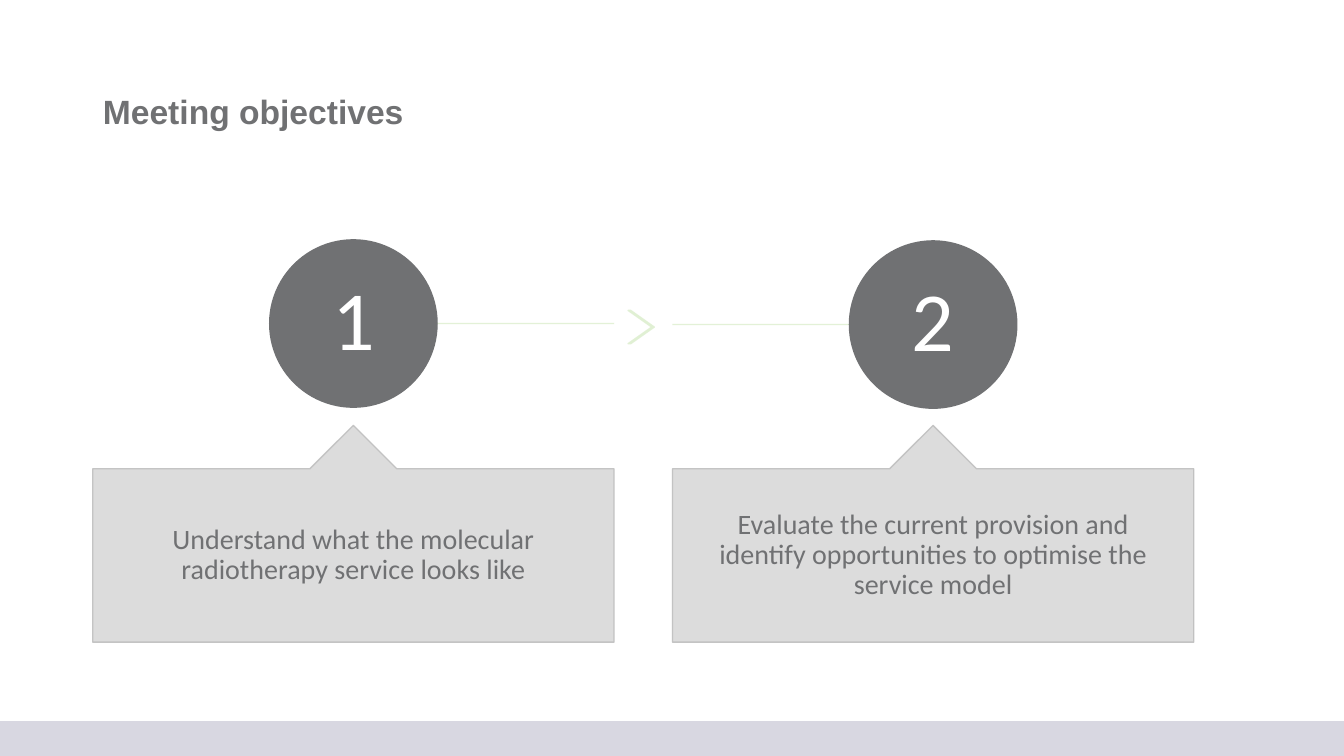
from pptx import Presentation
from pptx import util as u
from pptx.dml.color import RGBColor
from pptx.enum import shapes, text
from pptx.oxml import ns
from lxml import etree

GREY, GREEN, WHITE = "707173", "E0F0D3", "FFFFFF"
BAND, CALLOUT, EDGE = "D8D7E1", "D9D9D9", "BFBFBF"
KIND = shapes.MSO_SHAPE


def colour(value):
    return RGBColor.from_string(value)


class ObjectivesPage:
    """Holds the slide and the style shared by its elements."""

    def __init__(self, deck):
        self.page = deck.slides.add_slide(deck.slide_layouts[5])

    def soften(self, item):
        for tint in item.element.spPr.iter(ns.qn("a:srgbClr")):
            etree.SubElement(tint, ns.qn("a:alpha"), val="90000")

    def set_words(self, item, words, size, font, tint, align, bold=False):
        frame = item.text_frame
        frame.text = words
        frame.word_wrap = True
        frame.auto_size = text.MSO_AUTO_SIZE.NONE
        frame.vertical_anchor = text.MSO_ANCHOR.MIDDLE
        para = frame.paragraphs[0]
        para.alignment = align
        para.line_spacing = 0.9
        span = para.runs[0].font
        span.size, span.name, span.bold = u.Pt(size), font, bold
        span.color.rgb = colour(tint)

    def title(self, words, left, top, width, height):
        box = self.page.shapes.title
        box.left, box.top = u.Inches(left), u.Inches(top)
        box.width, box.height = u.Inches(width), u.Inches(height)
        self.set_words(box, words, 24, "Arial", GREY, text.PP_ALIGN.LEFT, True)

    def shape(self, kind, left, top, width, height, fill, line, soft=False, adjust=()):
        item = self.page.shapes.add_shape(
            kind, u.Inches(left), u.Inches(top), u.Inches(width), u.Inches(height))
        item.shadow.inherit = False
        item.fill.solid()
        item.fill.fore_color.rgb = colour(fill)
        item.line.color.rgb = colour(line)
        item.line.width = u.Pt(1)
        for index, value in enumerate(adjust):
            item.adjustments[index] = value
        if soft:
            self.soften(item)
        return item

    def label(self, item, words, size, tint, side, end):
        self.set_words(item, words, size, "Calibri", tint, text.PP_ALIGN.CENTER)
        frame = item.text_frame
        frame.margin_left = frame.margin_right = u.Inches(side)
        frame.margin_top = frame.margin_bottom = u.Inches(end)

    def rule(self, left, top, width):
        line = self.page.shapes.add_connector(
            shapes.MSO_CONNECTOR.STRAIGHT, u.Inches(left), u.Inches(top),
            u.Inches(left + width), u.Inches(top))
        line.line.color.rgb = colour(GREEN)
        line.line.width = u.Pt(1)
        etree.SubElement(line.element.spPr, ns.qn("a:effectLst"))
        self.soften(line)

    def objective(self, number, words, left, circle_top):
        width, diameter = 5.17, 1.66
        circle = self.shape(KIND.OVAL, left + (width - diameter) / 2, circle_top,
                            diameter, diameter, GREY, GREY)
        self.label(circle, str(number), 60, WHITE, 0.07, 0.07)
        callout = self.shape(KIND.UP_ARROW_CALLOUT, left, 4.22, width, 2.15,
                             CALLOUT, EDGE, True, (0.5, 0.2, 0.2, 1))
        self.label(callout, words, 20, GREY, 0.41, 0.18)


def main():
    deck = Presentation()
    deck.slide_width, deck.slide_height = u.Inches(13.33), u.Inches(7.5)
    slide = ObjectivesPage(deck)

    # Footer band and title
    slide.shape(KIND.RECTANGLE, 0, 7.16, 13.33, 0.34, BAND, BAND)
    slide.title("Meeting objectives", 0.92, 0.4, 11.5, 1.45)

    # Link between the two steps, behind the circles
    slide.rule(3.79, 3.21, 2.3)
    slide.shape(KIND.CHEVRON, 6.23, 3.08, 0.26, 0.33, GREEN, GREEN, True, (0.9,))
    slide.rule(6.67, 3.22, 2.59)

    # Numbered objectives
    slide.objective(1, "Understand what the molecular radiotherapy service looks like",
                    0.92, 2.38)
    slide.objective(2, "Evaluate the current provision and identify opportunities "
                    "to optimise the service model", 6.67, 2.39)

    deck.save("out.pptx")


if __name__ == "__main__":
    main()
